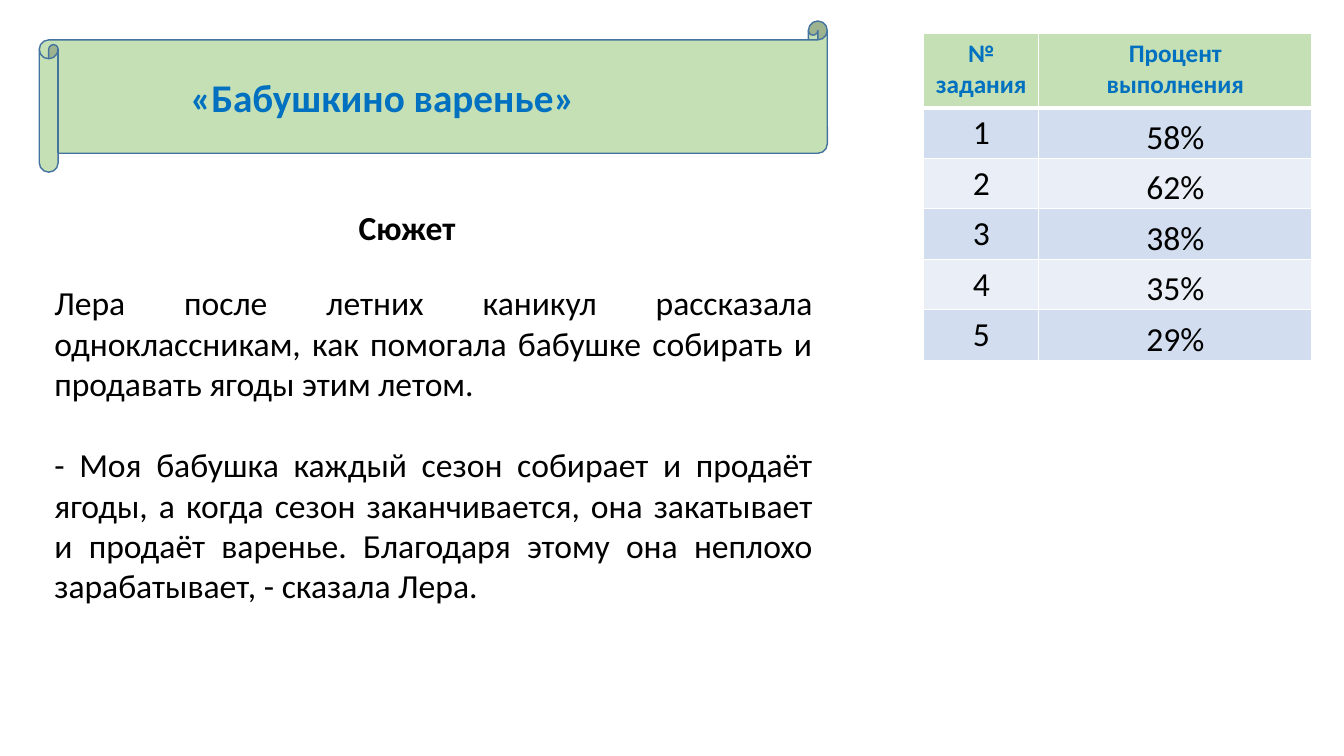
from lxml import etree
from pptx import Presentation
from pptx import util as u
from pptx.dml.color import RGBColor
from pptx.enum import shapes, text
from pptx.oxml import ns

COLORS = {"green": "C5E0B4", "outline": "43739E", "blue": "0070C0", "black": "000000",
          "white": "FFFFFF", "band": "D2DEEF", "light": "EAEFF7"}
STORY = [
    "Лера после летних каникул рассказала одноклассникам, как помогала бабушке собирать "
    "и продавать ягоды этим летом.",
    "- Моя бабушка каждый сезон собирает и продаёт ягоды, а когда сезон заканчивается, "
    "она закатывает и продаёт варенье. Благодаря этому она неплохо зарабатывает, - сказала Лера.",
]
HEADERS = ["№ задания", "Процент\nвыполнения"]
RESULTS = ["58%", "62%", "38%", "35%", "29%"]


def rgb(name):
    """Return the named colour."""
    return RGBColor.from_string(COLORS[name])


def write(tf, lines, size, color="black", bold=False, align=text.PP_ALIGN.LEFT, gap=0):
    """Fill a text frame with one paragraph per line."""
    for i, line in enumerate(lines):
        p = tf.add_paragraph() if i else tf.paragraphs[0]
        p.text = line
        p.alignment = align
        p.space_before = u.Pt(gap if i else 0)
        p.font.name, p.font.size, p.font.bold = "Calibri", u.Pt(size), bold
        p.font.color.rgb = rgb(color)


def add_banner(s, x, y, w, h):
    """Draw the scroll that carries the title."""
    sp = s.shapes.add_shape(shapes.MSO_SHAPE.HORIZONTAL_SCROLL, u.Cm(x), u.Cm(y), u.Cm(w), u.Cm(h))
    sp.shadow.inherit = False
    sp.fill.solid()
    sp.fill.fore_color.rgb = rgb("green")
    sp.line.color.rgb = rgb("outline")
    sp.line.width = u.Pt(1)
    tf = sp.text_frame
    tf.vertical_anchor = text.MSO_ANCHOR.MIDDLE
    tf.margin_left = u.Cm(3.33)
    write(tf, ["«Бабушкино варенье»"], 28, "blue", True)


def add_story(s, x, y, w, h):
    """Place the plot heading and the justified story below it."""
    sp = s.shapes.add_textbox(u.Cm(x + 7.67), u.Cm(y), u.Cm(2.97), u.Cm(1.27))
    sp.text_frame.word_wrap = False
    write(sp.text_frame, ["Сюжет"], 24, bold=True)
    sp = s.shapes.add_textbox(u.Cm(x), u.Cm(y + 1.91), u.Cm(w), u.Cm(h - 1.91))
    sp.text_frame.word_wrap = True
    write(sp.text_frame, STORY, 24, align=text.PP_ALIGN.JUSTIFY, gap=29.3)


def style_cell(cell, fill, top=1, bottom=1):
    """Set the fill and the white borders of a cell."""
    cell.fill.solid()
    cell.fill.fore_color.rgb = rgb(fill)
    pr = cell._tc.get_or_add_tcPr()
    for i, (side, width) in enumerate(zip("LRTB", (1, 1, top, bottom))):
        ln = etree.Element(ns.qn(f"a:ln{side}"), w=str(u.Pt(width)))
        solid = etree.SubElement(ln, ns.qn("a:solidFill"))
        etree.SubElement(solid, ns.qn("a:srgbClr"), val=COLORS["white"])
        pr.insert(i, ln)


def add_results(s, x, y, w, h):
    """Build the table of completion rates."""
    header_h, number_w = 1.88, 2.9
    table = s.shapes.add_table(len(RESULTS) + 1, 2, u.Cm(x), u.Cm(y), u.Cm(w), u.Cm(h)).table
    for col, width in zip(table.columns, (number_w, w - number_w)):
        col.width = u.Cm(width)
    for i, row in enumerate(table.rows):
        row.height = u.Cm((h - header_h) / len(RESULTS) if i else header_h)
    for j, header in enumerate(HEADERS):
        cell = table.cell(0, j)
        style_cell(cell, "green", bottom=3)
        write(cell.text_frame, header.split("\n"), 18, "blue", True, text.PP_ALIGN.CENTER)
    for i, result in enumerate(RESULTS, 1):
        for j, value in enumerate((str(i), result)):
            cell = table.cell(i, j)
            style_cell(cell, "band" if i % 2 else "light", top=3 if i == 1 else 1)
            write(cell.text_frame, [value], 24, align=text.PP_ALIGN.CENTER)
        cell.vertical_anchor = text.MSO_ANCHOR.BOTTOM
        cell.margin_left = cell.margin_right = cell.margin_top = u.Cm(0.03)
        cell.margin_bottom = 0


def main():
    """Build the slide and save it."""
    prs = Presentation()
    prs.slide_width, prs.slide_height = u.Cm(33.87), u.Cm(19.05)
    s = prs.slides.add_slide(prs.slide_layouts[6])
    add_banner(s, 0.99, 0.53, 19.86, 3.81)
    add_story(s, 1.12, 5.08, 19.61, 11.16)
    add_results(s, 23.28, 0.84, 9.78, 8.23)
    prs.save("out.pptx")


if __name__ == "__main__":
    main()
